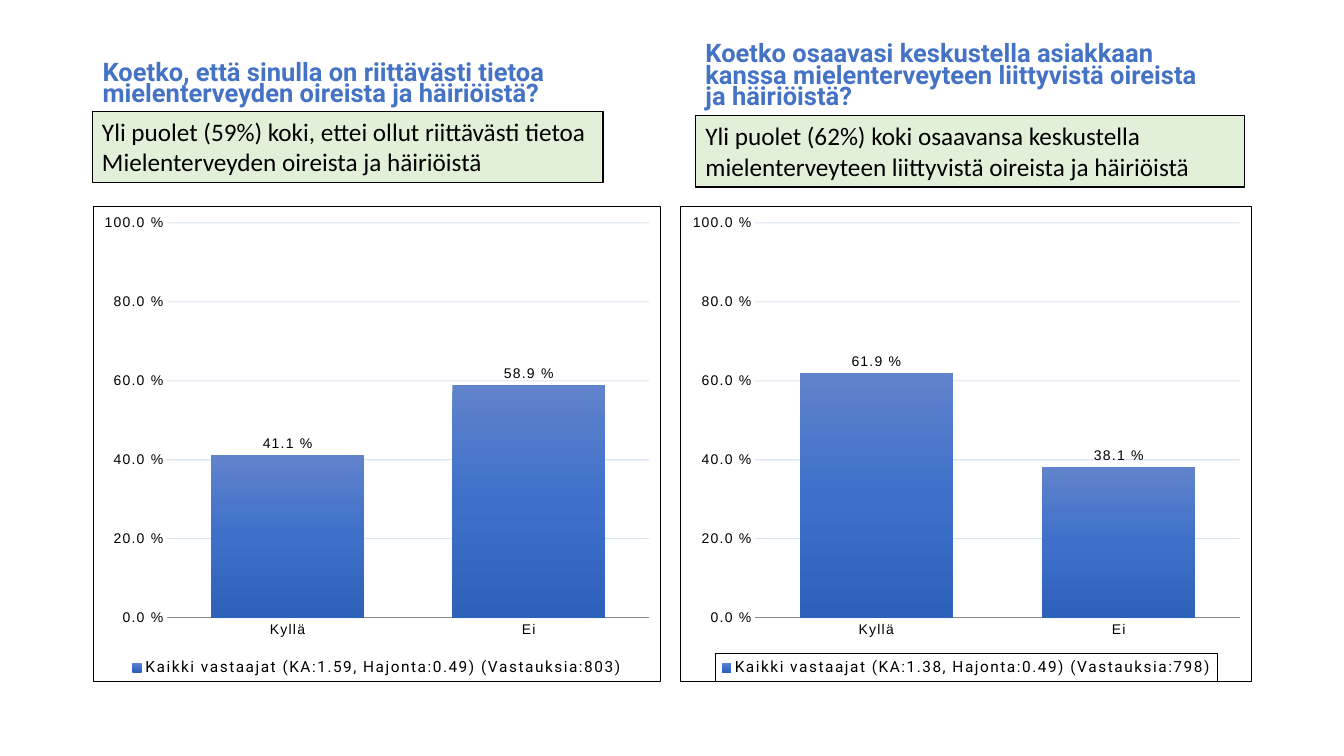
from dataclasses import dataclass

from pptx import Presentation
from pptx.chart.data import CategoryChartData
from pptx.dml.color import RGBColor
from pptx.enum import chart as ch, shapes, text
from pptx.oxml import parse_xml
from pptx.oxml.ns import nsdecls, qn
from pptx.util import Pt


@dataclass(frozen=True)
class Theme:
    heading: str = "4472C4"
    callout: str = "E2F0D9"
    ink: str = "000000"
    axis: str = "8C8C8C"
    grid: str = "4F81BD"
    bar_stops: tuple = ("6083CB", "3E70CA", "2E61BA")
    heading_size: float = 18.2
    callout_size: float = 18
    legend_size: float = 11
    label_size: float = 10
    spacing: int = 100  # hundredths of a point between chart letters


THEME = Theme()
PERCENT = "0.0\\ %"


def set_font(font, face, size, color, bold=False):
    font.name, font.size, font.bold = face, Pt(size), bold
    font.color.rgb = RGBColor.from_string(color)


def set_chart_font(font, face, size):
    """Style chart text, including its wide letter spacing."""
    set_font(font, face, size, THEME.ink)
    font._element.set("spc", str(THEME.spacing))


def set_layout(parent, index, x, y, w, h, inner=False):
    """Fix a chart part at fractions of the chart area."""
    for old in parent.findall(qn("c:layout")):
        parent.remove(old)
    target = '<c:layoutTarget val="inner"/>' if inner else ""
    parent.insert(index, parse_xml(
        f'<c:layout {nsdecls("c")}><c:manualLayout>{target}'
        '<c:xMode val="edge"/><c:yMode val="edge"/>'
        f'<c:x val="{x}"/><c:y val="{y}"/><c:w val="{w}"/><c:h val="{h}"/>'
        '</c:manualLayout></c:layout>'))


def outline_xml(extra=""):
    return (f'<c:spPr {nsdecls("c", "a")}>{extra}<a:ln w="{Pt(0.75)}"><a:solidFill>'
            f'<a:srgbClr val="{THEME.ink}"/></a:solidFill></a:ln></c:spPr>')


def add_heading(slide, left, top, width, height, question):
    frame = slide.shapes.add_textbox(Pt(left), Pt(top), Pt(width), Pt(height)).text_frame
    frame.word_wrap = True
    frame.vertical_anchor = text.MSO_ANCHOR.BOTTOM
    paragraph = frame.paragraphs[0]
    paragraph.text = question
    paragraph.line_spacing = 0.7
    set_font(paragraph.font, "Roboto", THEME.heading_size, THEME.heading, True)


def add_callout(slide, left, top, width, height, lines):
    callout = slide.shapes.add_shape(
        shapes.MSO_SHAPE.RECTANGLE, Pt(left), Pt(top), Pt(width), Pt(height))
    callout.shadow.inherit = False
    callout.fill.solid()
    callout.fill.fore_color.rgb = RGBColor.from_string(THEME.callout)
    callout.line.color.rgb = RGBColor.from_string(THEME.ink)
    callout.line.width = Pt(0.75)
    frame = callout.text_frame
    frame.word_wrap = True
    frame.vertical_anchor = text.MSO_ANCHOR.TOP
    frame.text = "\n".join(lines)
    for paragraph in frame.paragraphs:
        paragraph.alignment = text.PP_ALIGN.LEFT
        set_font(paragraph.font, "Calibri", THEME.callout_size, THEME.ink)


def style_axes(chart):
    for axis in (chart.category_axis, chart.value_axis):
        axis.major_tick_mark = axis.minor_tick_mark = ch.XL_TICK_MARK.NONE
        set_chart_font(axis.tick_labels.font, "Arial", THEME.label_size)
    chart.category_axis.format.line.color.rgb = RGBColor.from_string(THEME.axis)
    values = chart.value_axis
    values.minimum_scale, values.maximum_scale, values.major_unit = 0, 1, 0.2
    values.format.line.fill.background()
    values.tick_labels.number_format = PERCENT
    values.tick_labels.number_format_is_linked = False
    grid = values.major_gridlines.format.line
    grid.width = Pt(0.75)
    grid.color.rgb = RGBColor.from_string(THEME.grid)
    grid_color = next(values.major_gridlines._xAx.iter(qn("c:majorGridlines"))).find(
        ".//" + qn("a:srgbClr"))
    grid_color.append(parse_xml(f'<a:alpha {nsdecls("a")} val="20000"/>'))


def style_bars(plot):
    plot.gap_width = 58
    plot.vary_by_categories = False
    plot.has_data_labels = True
    labels = plot.data_labels
    labels.show_value = True
    labels.number_format = PERCENT
    labels.number_format_is_linked = False
    labels.position = ch.XL_LABEL_POSITION.OUTSIDE_END
    set_chart_font(labels.font, "Arial", THEME.label_size)
    stops = "".join(f'<a:gs pos="{i * 50000}"><a:srgbClr val="{color}"/></a:gs>'
                    for i, color in enumerate(THEME.bar_stops))
    bars = plot.series[0].format
    bars.line.fill.background()
    bars.fill.background()
    properties = plot.series[0]._element.find(qn("c:spPr"))
    properties.replace(properties.find(qn("a:noFill")), parse_xml(
        f'<a:gradFill {nsdecls("a")} rotWithShape="1"><a:gsLst>{stops}</a:gsLst>'
        '<a:lin ang="5400000" scaled="0"/></a:gradFill>'))


def add_answer_chart(slide, left, top, width, height, respondents, shares, framed_legend):
    data = CategoryChartData(number_format=PERCENT)
    data.categories = ["Kyllä", "Ei"]
    data.add_series(respondents, shares)
    chart = slide.shapes.add_chart(
        ch.XL_CHART_TYPE.COLUMN_CLUSTERED, Pt(left), Pt(top), Pt(width), Pt(height),
        data).chart
    chart.has_title = False
    set_chart_font(chart.font, "Roboto", THEME.legend_size)
    style_axes(chart)
    style_bars(chart.plots[0])

    chart.has_legend = True
    legend = chart.legend
    legend.position = ch.XL_LEGEND_POSITION.BOTTOM
    legend.include_in_layout = False
    set_chart_font(legend.font, "Roboto", THEME.legend_size)
    set_layout(legend._element, 1, 0.06, 0.94, 0.88, 0.06)
    if framed_legend:
        legend._element.find(qn("c:txPr")).addprevious(parse_xml(outline_xml()))

    chart_part = chart._chartSpace.find(qn("c:chart"))
    set_layout(chart_part.find(qn("c:plotArea")), 0, 0.13, 0.035, 0.85, 0.83, inner=True)
    chart_part.addnext(parse_xml(outline_xml("<a:noFill/>")))


def build_slide(presentation):
    slide = presentation.slides.add_slide(presentation.slide_layouts[6])
    add_heading(slide, 66.2, 12, 406, 68,
                "Koetko, että sinulla on riittävästi tietoa "
                "mielenterveyden oireista ja häiriöistä?")
    add_heading(slide, 496.8, 8, 381.6, 74,
                "Koetko osaavasi keskustella asiakkaan kanssa "
                "mielenterveyteen liittyvistä oireista ja häiriöistä?")
    add_answer_chart(slide, 66.2, 147, 406, 340.5,
                     "Kaikki vastaajat (KA:1.59, Hajonta:0.49) (Vastauksia:803)",
                     (0.411, 0.589), False)
    add_callout(slide, 65.8, 79.6, 365, 51,
                ("Yli puolet (59%) koki, ettei ollut riittävästi tietoa",
                 "Mielenterveyden oireista ja häiriöistä"))
    add_answer_chart(slide, 486, 147, 408.2, 340.5,
                     "Kaikki vastaajat (KA:1.38, Hajonta:0.49) (Vastauksia:798)",
                     (0.619, 0.381), True)
    add_callout(slide, 496.8, 82.6, 392.4, 51,
                ("Yli puolet (62%) koki osaavansa keskustella",
                 "mielenterveyteen liittyvistä oireista ja häiriöistä"))


def main():
    presentation = Presentation()
    presentation.slide_width, presentation.slide_height = Pt(960), Pt(540)
    build_slide(presentation)
    presentation.save("out.pptx")


if __name__ == "__main__":
    main()
